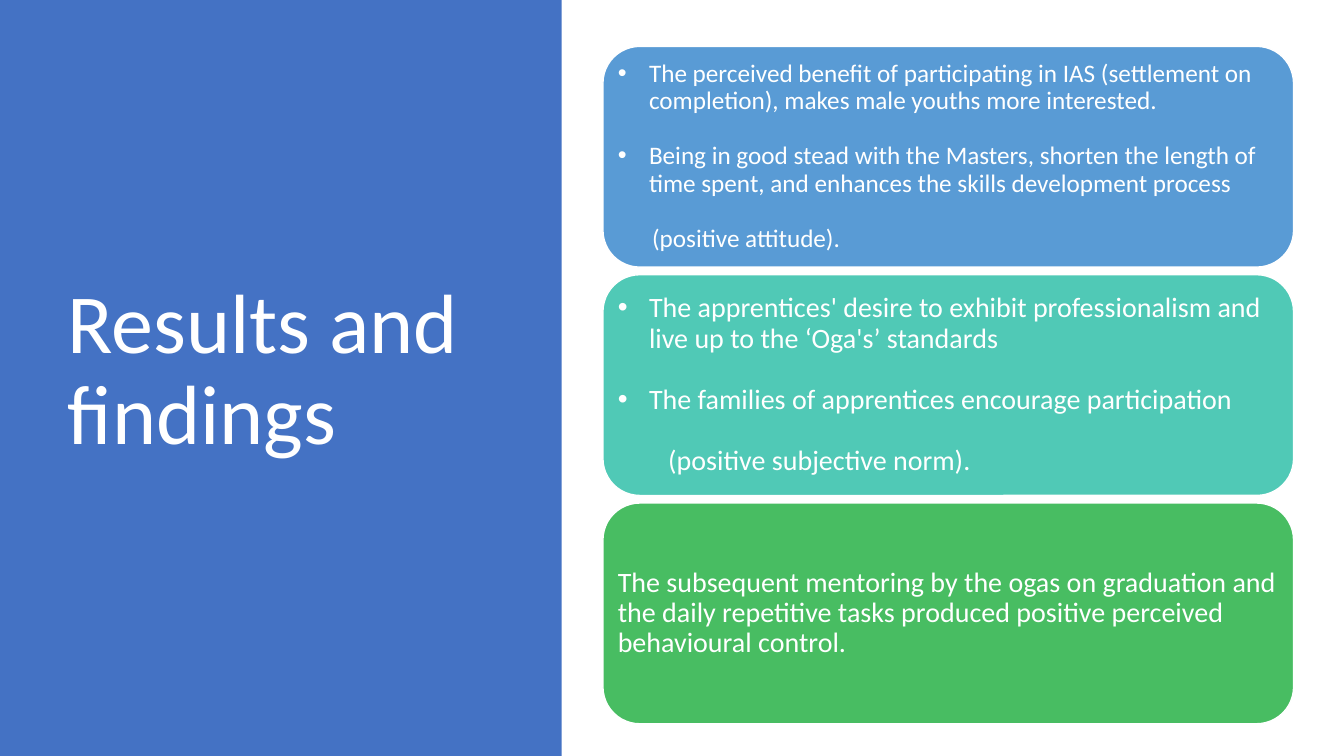
from lxml import etree
from pptx import Presentation
from pptx.dml.color import RGBColor
from pptx.enum.shapes import MSO_SHAPE
from pptx.enum.text import MSO_ANCHOR, PP_ALIGN
from pptx.oxml.ns import qn
from pptx.util import Inches, Pt

WHITE = RGBColor(0xFF, 0xFF, 0xFF)
BLUE = RGBColor(0x44, 0x72, 0xC4)
SKY = RGBColor(0x59, 0x9B, 0xD5)
TEAL = RGBColor(0x50, 0xC9, 0xB6)
GREEN = RGBColor(0x48, 0xBD, 0x62)

FONT = "Calibri"
LINE_SPACING = 0.9
BULLET_INDENT = 0.31
CARD_LEFT, CARD_TOP, CARD_WIDTH, CARD_HEIGHT = 5.98, 0.46, 6.85, 2.19
CARD_PITCH = 2.265

# Each card: fill, text size, paragraphs as (text, bulleted, left indent)
CARDS = [
    (SKY, 18, [
        ("The perceived benefit of participating in IAS (settlement on "
         "completion), makes male youths more interested.", True, BULLET_INDENT),
        ("Being in good stead with the Masters, shorten the length of time "
         "spent, and enhances the skills development process", True, BULLET_INDENT),
        ("(positive attitude).", False, 0.34),
    ]),
    (TEAL, 20, [
        ("The apprentices' desire to exhibit professionalism and live up to "
         "the ‘Oga's’ standards", True, BULLET_INDENT),
        ("The families of apprentices encourage participation", True, BULLET_INDENT),
        ("(positive subjective norm).", False, 0.5),
    ]),
    (GREEN, 20, [
        ("The subsequent mentoring by the ogas on graduation and the daily "
         "repetitive tasks produced positive perceived behavioural control.",
         False, 0),
    ]),
]


def format_frame(tf, **values):
    values = {"word_wrap": True, "vertical_anchor": MSO_ANCHOR.MIDDLE, **values}
    for name, value in values.items():
        setattr(tf, name, value)


def write_paragraph(p, text, size):
    p.alignment = PP_ALIGN.LEFT
    p.line_spacing = LINE_SPACING
    r = p.add_run()
    r.text = text
    for name, value in {"name": FONT, "size": Pt(size)}.items():
        setattr(r.font, name, value)
    r.font.color.rgb = WHITE


def indent_paragraph(p, left, bulleted):
    pPr = p._p.get_or_add_pPr()
    pPr.set("marL", str(Inches(left)))
    pPr.set("indent", str(-Inches(left) if bulleted else 0))
    if bulleted:
        etree.SubElement(pPr, qn("a:buFont"), typeface="Arial")
        etree.SubElement(pPr, qn("a:buChar"), char="•")


def add_block(s, kind, left, top, width, height, fill):
    sp = s.shapes.add_shape(kind, Inches(left), Inches(top),
                            Inches(width), Inches(height))
    sp.shadow.inherit = False
    sp.fill.solid()
    sp.fill.fore_color.rgb = fill
    sp.line.fill.background()
    return sp


def add_side_panel(s):
    """Adds the coloured panel behind the title."""
    panel = add_block(s, MSO_SHAPE.RECTANGLE, 0, 0, 5.57, 7.5, BLUE)
    s.shapes.title._element.addprevious(panel._element)


def fill_title(s, text):
    title = s.shapes.title
    box = {"left": 0.57, "top": 0.68, "width": 4.16, "height": 6.02}
    for name, value in box.items():
        setattr(title, name, Inches(value))
    format_frame(title.text_frame)
    write_paragraph(title.text_frame.paragraphs[0], text, 60)


def add_card(s, top, fill, size, paragraphs):
    card = add_block(s, MSO_SHAPE.ROUNDED_RECTANGLE, CARD_LEFT, top,
                     CARD_WIDTH, CARD_HEIGHT, fill)
    card.adjustments[0] = 0.167
    card.line.color.rgb = WHITE
    card.line.width = Pt(1)
    tf = card.text_frame
    format_frame(tf, margin_left=Inches(0.04), margin_right=Inches(0.04),
                 margin_top=0, margin_bottom=0)
    for i, (text, bulleted, left) in enumerate(paragraphs):
        p = tf.add_paragraph() if i else tf.paragraphs[0]
        write_paragraph(p, text, size)
        if i:
            p.space_before = Pt(size * 1.1)
        indent_paragraph(p, left, bulleted)


def main():
    prs = Presentation()
    prs.slide_width, prs.slide_height = Inches(13.33), Inches(7.5)
    s = prs.slides.add_slide(prs.slide_layouts[5])
    add_side_panel(s)
    fill_title(s, "Results and findings")
    for i, (fill, size, paragraphs) in enumerate(CARDS):
        add_card(s, CARD_TOP + i * CARD_PITCH, fill, size, paragraphs)
    prs.save("out.pptx")


if __name__ == "__main__":
    main()
